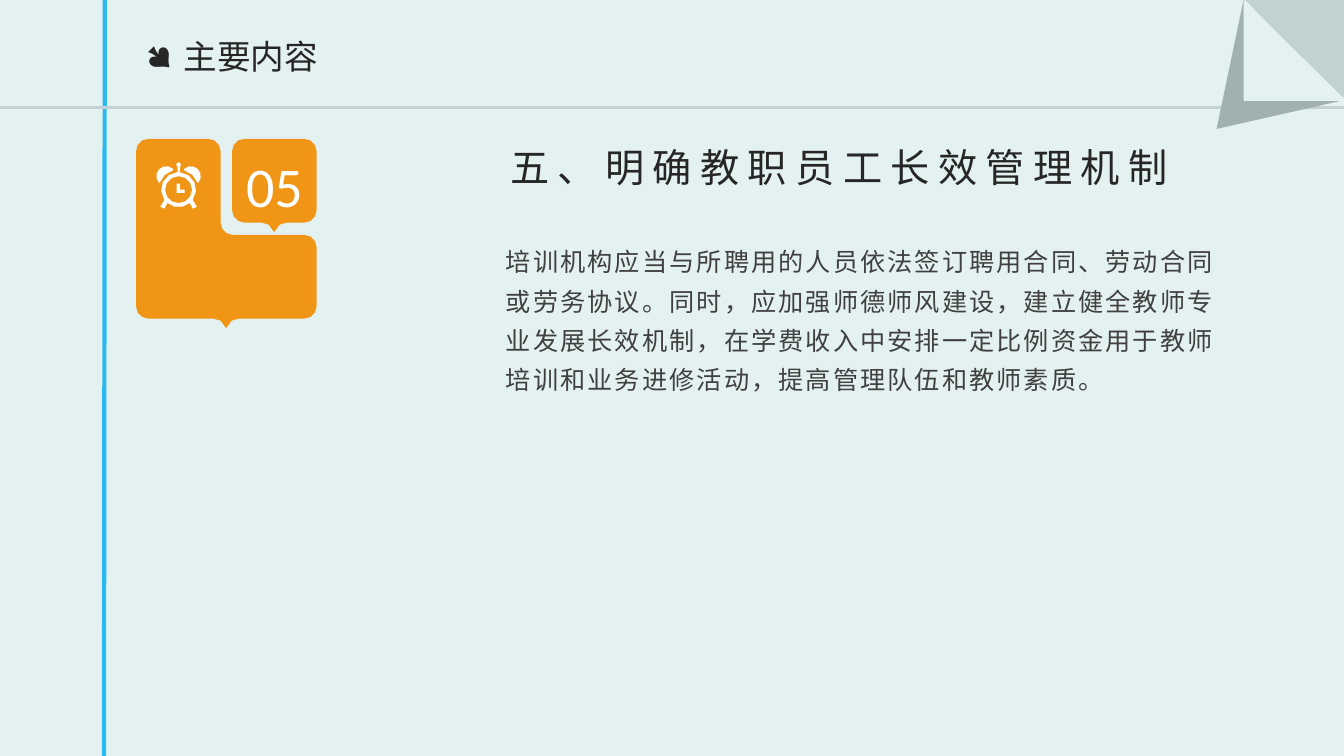
from dataclasses import dataclass
from math import cos, radians, sin

from lxml import etree
from pptx import Presentation
from pptx import util as u
from pptx.dml.color import RGBColor
from pptx.enum import shapes, text
from pptx.oxml.ns import qn

Cm = u.Cm


@dataclass(frozen=True)
class Theme:
    page: str = "E3F1F0"
    margin_rule: str = "2BBAEF"
    header_rule: str = "C3D1D7"
    fold_light: str = "C1D3D1"
    fold_dark: str = "A1B1B2"
    accent: str = "F09515"
    white: str = "FFFFFF"
    heading: str = "262626"
    body: str = "404040"
    chinese: str = "Noto Sans CJK SC"
    digits: str = "Calibri"
    symbols: str = "Wingdings"
    section_size: int = 24
    title_size: int = 28
    body_size: int = 18
    number_size: int = 40


def color(value):
    return RGBColor.from_string(value)


def write(frame, words, *, size, ink, font, align=text.PP_ALIGN.LEFT,
          tracking=0, leading=None, bullet=None, bullet_font=None, hang=0):
    paragraph = frame.paragraphs[0]
    paragraph.alignment = align
    if leading:
        paragraph.line_spacing = leading
    if bullet:
        properties = paragraph._p.get_or_add_pPr()
        properties.set("marL", str(Cm(hang)))
        properties.set("indent", str(-Cm(hang)))
        etree.SubElement(properties, qn("a:buFont")).set("typeface", bullet_font)
        etree.SubElement(properties, qn("a:buChar")).set("char", bullet)
    run = paragraph.add_run()
    run.text = words
    run.font.size = u.Pt(size)
    run.font.color.rgb = color(ink)
    run.font.name = font
    character = run._r.get_or_add_rPr()
    etree.SubElement(character, qn("a:ea")).set("typeface", font)
    if tracking:
        character.set("spc", str(round(tracking * 100)))


def arc(x, y, radius, start, end):
    steps = max(1, round(abs(end - start) / 30))
    angles = [radians(start + (end - start) * i / steps) for i in range(steps + 1)]
    return [(x + radius * cos(a), y + radius * sin(a)) for a in angles]


def mirror(points):
    return [(-x, y) for x, y in reversed(points)]


def tail(x, y):
    side = [(0.32, 0), (0.14, 0.05)]
    return [(x + dx, y + dy) for dx, dy in side + [(0, 0.24)] + mirror(side)]


def speech_panel(left, top, right, bottom, radius, tip, notch=None):
    west, east = left + radius, right - radius
    north, south = top + radius, bottom - radius
    outline = arc(west, north, radius, 180, 270)
    if notch:
        column, ledge = notch
        outline += arc(column - radius, north, radius, 270, 360)
        outline += arc(column + radius, ledge - radius, radius, 180, 90)
        north = ledge + radius
    outline += arc(east, north, radius, 270, 360)
    outline += arc(east, south, radius, 0, 90)
    outline += tail(tip, bottom)
    return outline + arc(west, south, radius, 90, 180)


def alarm_clock(x, y):
    rim, face = 0.44, 0.34
    leg = [(0.46, 0.43), (0.36, 0.48)]
    case = (arc(0, 0, rim, -87, 36) + leg + arc(0, 0, rim, 50, 130)
            + mirror(leg) + arc(0, 0, rim, 144, 267)
            + arc(0, -0.63, 0.06, 110, 430)[::2])
    bell = arc(0.31, -0.34, 0.25, -130, 42) + arc(0, 0, 0.51, -20, -75)
    hands = [(-0.05, -0.15), (0.03, -0.15), (0.03, 0),
             (0.15, 0), (0.15, 0.08), (-0.05, 0.08)]
    contours = [case, arc(0, 0, face, 360, 0)[:-1], hands, bell, mirror(bell)]
    return [[(x + dx, y + dy) for dx, dy in contour] for contour in contours]


class Page:
    def __init__(self, slide, theme):
        self.slide = slide
        self.theme = theme

    def paint(self, shape, fill):
        shape.shadow.inherit = False
        shape.fill.solid()
        shape.fill.fore_color.rgb = color(fill)
        shape.line.fill.background()
        return shape

    def panel(self, left, top, width, height, fill):
        self.paint(self.slide.shapes.add_shape(
            shapes.MSO_SHAPE.RECTANGLE, left, top, width, height), fill)

    def rule(self, start, end, ink, weight):
        line = self.slide.shapes.add_connector(
            shapes.MSO_CONNECTOR.STRAIGHT, *map(Cm, start + end))
        line.line.color.rgb = color(ink)
        line.line.width = u.Pt(weight)
        etree.SubElement(line._element.spPr, qn("a:effectLst"))

    def outline(self, contours, fill):
        pens = [[(Cm(x), Cm(y)) for x, y in contour] for contour in contours]
        builder = self.slide.shapes.build_freeform(*pens[0][0])
        builder.add_line_segments(pens[0][1:], close=True)
        for pen in pens[1:]:
            builder.move_to(*pen[0])
            builder.add_line_segments(pen[1:], close=True)
        return self.paint(builder.convert_to_shape(), fill)

    def words(self, left, top, width, height, content, wrap=True, **style):
        box = self.slide.shapes.add_textbox(*map(Cm, (left, top, width, height)))
        frame = box.text_frame
        frame.word_wrap = wrap
        frame.auto_size = text.MSO_AUTO_SIZE.SHAPE_TO_FIT_TEXT
        write(frame, content, font=self.theme.chinese, **style)


def main():
    deck = Presentation()
    deck.slide_width, deck.slide_height = Cm(33.87), Cm(19.05)
    theme = Theme()
    page = Page(deck.slides.add_slide(deck.slide_layouts[6]), theme)

    page.panel(0, 0, deck.slide_width, deck.slide_height, theme.page)
    page.rule((2.64, 0), (2.62, 19.05), theme.margin_rule, 3)
    page.rule((-0.28, 2.7), (33.87, 2.7), theme.header_rule, 2.25)

    page.outline([[(31.34, -0.04), (33.88, -0.04), (33.87, 2.54)]],
                 theme.fold_light)
    page.outline([[(31.36, -0.1), (30.66, 3.25), (33.98, 2.5), (31.36, 2.53)]],
                 theme.fold_dark)
    page.outline([[(31.34, 0), (31.34, 2.54), (33.93, 2.54)]], theme.page)

    page.words(3.43, 0.79, 9.07, 1.28, "主要内容", size=theme.section_size,
               ink=theme.heading, bullet="●", bullet_font=theme.symbols,
               hang=0.95)

    page.outline([speech_panel(3.43, 3.5, 7.98, 8.03, 0.31, 5.7,
                               notch=(5.56, 5.92))], theme.accent)
    page.outline(alarm_clock(4.5, 4.78), theme.white)
    badge = page.outline([speech_panel(5.85, 3.5, 7.98, 5.61, 0.31, 6.91)],
                         theme.accent)
    badge.text_frame.vertical_anchor = text.MSO_ANCHOR.MIDDLE
    write(badge.text_frame, "05", size=theme.number_size, ink=theme.white,
          font=theme.digits, align=text.PP_ALIGN.CENTER)

    page.words(12.51, 3.48, 17.27, 1.45, "五、明确教职员工长效管理机制", wrap=False,
               size=theme.title_size, ink=theme.heading, tracking=6,
               align=text.PP_ALIGN.CENTER)
    page.words(12.5, 5.86, 18.97, 4.24,
               "培训机构应当与所聘用的人员依法签订聘用合同、劳动合同或劳务协议。"
               "同时，应加强师德师风建设，建立健全教师专业发展长效机制，"
               "在学费收入中安排一定比例资金用于教师培训和业务进修活动，"
               "提高管理队伍和教师素质。",
               size=theme.body_size, ink=theme.body, tracking=1.5, leading=1.3)

    deck.save("out.pptx")


if __name__ == "__main__":
    main()
